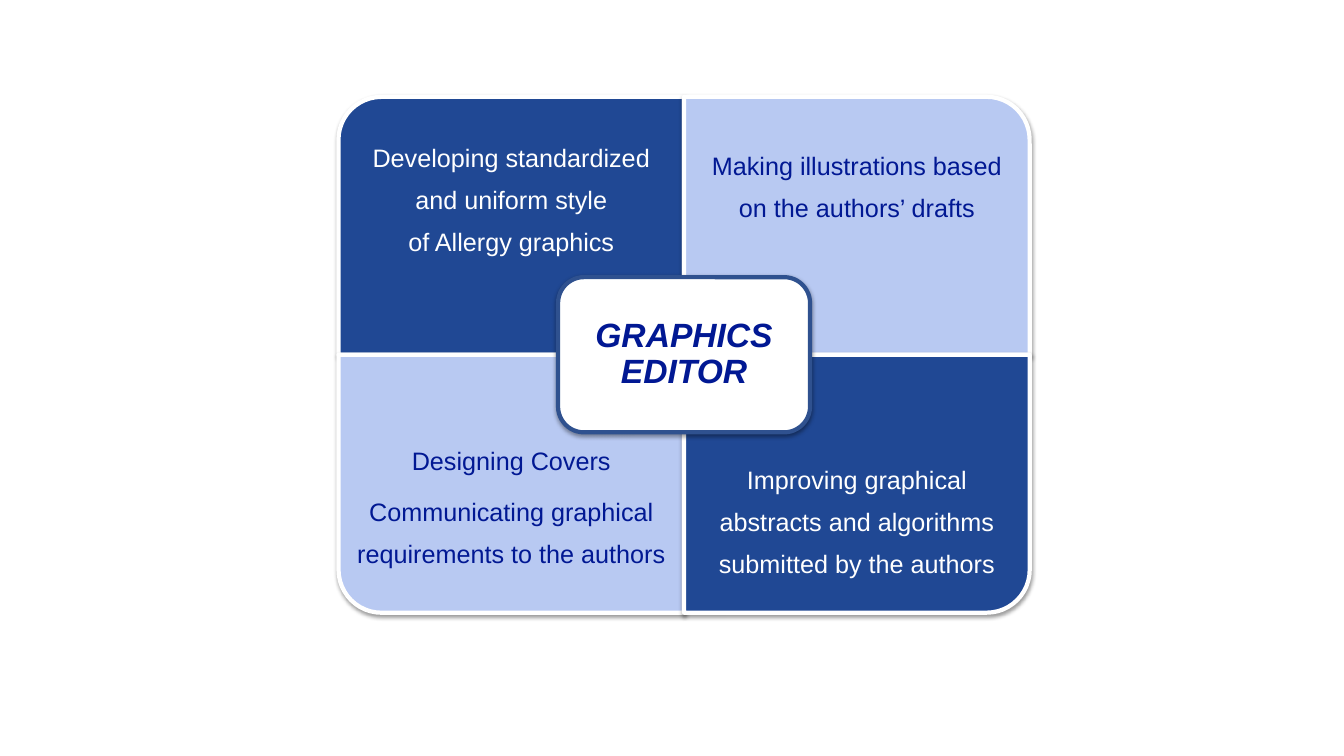
import dataclasses
from typing import Any

import pptx
import pptx.dml.color
import pptx.enum.shapes
import pptx.enum.text
import pptx.oxml
import pptx.oxml.ns
import pptx.util

Cm = pptx.util.Cm
Pt = pptx.util.Pt
MSO_SHAPE = pptx.enum.shapes.MSO_SHAPE
ANCHOR = pptx.enum.text.MSO_ANCHOR


@dataclasses.dataclass(frozen=True)
class Theme:
    font: str = "Arial"
    dark: str = "204894"
    light: str = "B8C9F2"
    white: str = "FFFFFF"
    navy: str = "011893"
    border: str = "2F518F"
    body_size: float = 18
    hub_size: float = 24
    line_width: float = 3
    space_after: float = 0.35


@dataclasses.dataclass(frozen=True)
class Quadrant:
    col: int
    row: int
    rotation: int
    fill: str
    color: str
    paragraphs: tuple[str, ...]
    anchor: Any = ANCHOR.MIDDLE
    bottom_inset: float = 0.36


THEME = Theme()
LEFT, TOP = 8.53, 2.44
CELL_W, CELL_H = 8.71, 6.5
TEXT_H = CELL_H * 0.75
HUB_W, HUB_H = 6.35, 3.91
INSET, HUB_INSET = 0.36, 0.25

QUADRANTS = (
    Quadrant(0, 0, 270, THEME.dark, THEME.white,
             ("Developing standardized\nand uniform style\nof Allergy graphics",)),
    Quadrant(1, 0, 0, THEME.light, THEME.navy,
             ("Making illustrations based\non the authors’ drafts",),
             bottom_inset=1.02),
    Quadrant(0, 1, 180, THEME.light, THEME.navy,
             ("Designing Covers",
              "Communicating graphical requirements to the authors"),
             anchor=ANCHOR.TOP),
    Quadrant(1, 1, 90, THEME.dark, THEME.white,
             ("Improving graphical abstracts and algorithms submitted by the authors",)),
)


def rgb(value: str) -> pptx.dml.color.RGBColor:
    return pptx.dml.color.RGBColor.from_string(value)


def add_shadow(sp: Any) -> None:
    sp.shadow.inherit = False
    effects = sp._element.spPr.find(pptx.oxml.ns.qn("a:effectLst"))
    effects.append(pptx.oxml.parse_xml(
        f'<a:outerShdw {pptx.oxml.ns.nsdecls("a")} blurRad="{Pt(3.1)}" '
        f'dist="{Pt(1.6)}" dir="5400000" rotWithShape="0">'
        '<a:srgbClr val="000000"><a:alpha val="38000"/></a:srgbClr></a:outerShdw>'))


def add_panel(shapes: Any, kind: Any, center_x: float, center_y: float,
              width: float, height: float, fill: str, line: str) -> Any:
    sp = shapes.add_shape(kind, Cm(center_x - width / 2), Cm(center_y - height / 2),
                          Cm(width), Cm(height))
    sp.fill.solid()
    sp.fill.fore_color.rgb = rgb(fill)
    sp.line.color.rgb = rgb(line)
    sp.line.width = Pt(THEME.line_width)
    add_shadow(sp)
    return sp


def write_text(sp: Any, paragraphs: tuple[str, ...], size: float, color: str,
               spacing: Any, inset: float, bottom_inset: float, anchor: Any,
               strong: bool = False) -> None:
    tf = sp.text_frame
    tf.word_wrap = True
    tf.vertical_anchor = anchor
    tf.margin_left = tf.margin_right = tf.margin_top = Cm(inset)
    tf.margin_bottom = Cm(bottom_inset)
    for i, text in enumerate(paragraphs):
        p = tf.add_paragraph() if i else tf.paragraphs[0]
        p.alignment = pptx.enum.text.PP_ALIGN.CENTER
        p.line_spacing = spacing
        p.space_after = Pt(size * THEME.space_after)
        for j, line in enumerate(text.split("\n")):
            if j:
                p.add_line_break()
            r = p.add_run()
            r.text = line
            r.font.name = THEME.font
            r.font.size = Pt(size)
            r.font.color.rgb = rgb(color)
            r.font.bold = r.font.italic = strong


def add_quadrant(shapes: Any, quadrant: Quadrant) -> None:
    x = LEFT + quadrant.col * CELL_W
    y = TOP + quadrant.row * CELL_H
    sideways = quadrant.rotation % 180 == 90
    width, height = (CELL_H, CELL_W) if sideways else (CELL_W, CELL_H)
    sp = add_panel(shapes, MSO_SHAPE.ROUND_1_RECTANGLE, x + CELL_W / 2, y + CELL_H / 2,
                   width, height, quadrant.fill, THEME.white)
    sp.rotation = quadrant.rotation
    text_y = y + quadrant.row * (CELL_H - TEXT_H)
    box = shapes.add_textbox(Cm(x), Cm(text_y), Cm(CELL_W), Cm(TEXT_H))
    write_text(box, quadrant.paragraphs, THEME.body_size, quadrant.color, Pt(30),
               INSET, quadrant.bottom_inset, quadrant.anchor)


def main() -> None:
    prs = pptx.Presentation()
    prs.slide_width, prs.slide_height = Cm(33.87), Cm(19.05)
    s = prs.slides.add_slide(prs.slide_layouts[6])
    shapes = s.shapes.add_group_shape().shapes
    for quadrant in QUADRANTS:
        add_quadrant(shapes, quadrant)
    hub = add_panel(shapes, MSO_SHAPE.ROUNDED_RECTANGLE, LEFT + CELL_W, TOP + CELL_H,
                    HUB_W, HUB_H, THEME.white, THEME.border)
    write_text(hub, ("GRAPHICS\nEDITOR",), THEME.hub_size, THEME.navy, 0.9,
               HUB_INSET, HUB_INSET, ANCHOR.MIDDLE, strong=True)
    prs.save("out.pptx")


if __name__ == "__main__":
    main()
